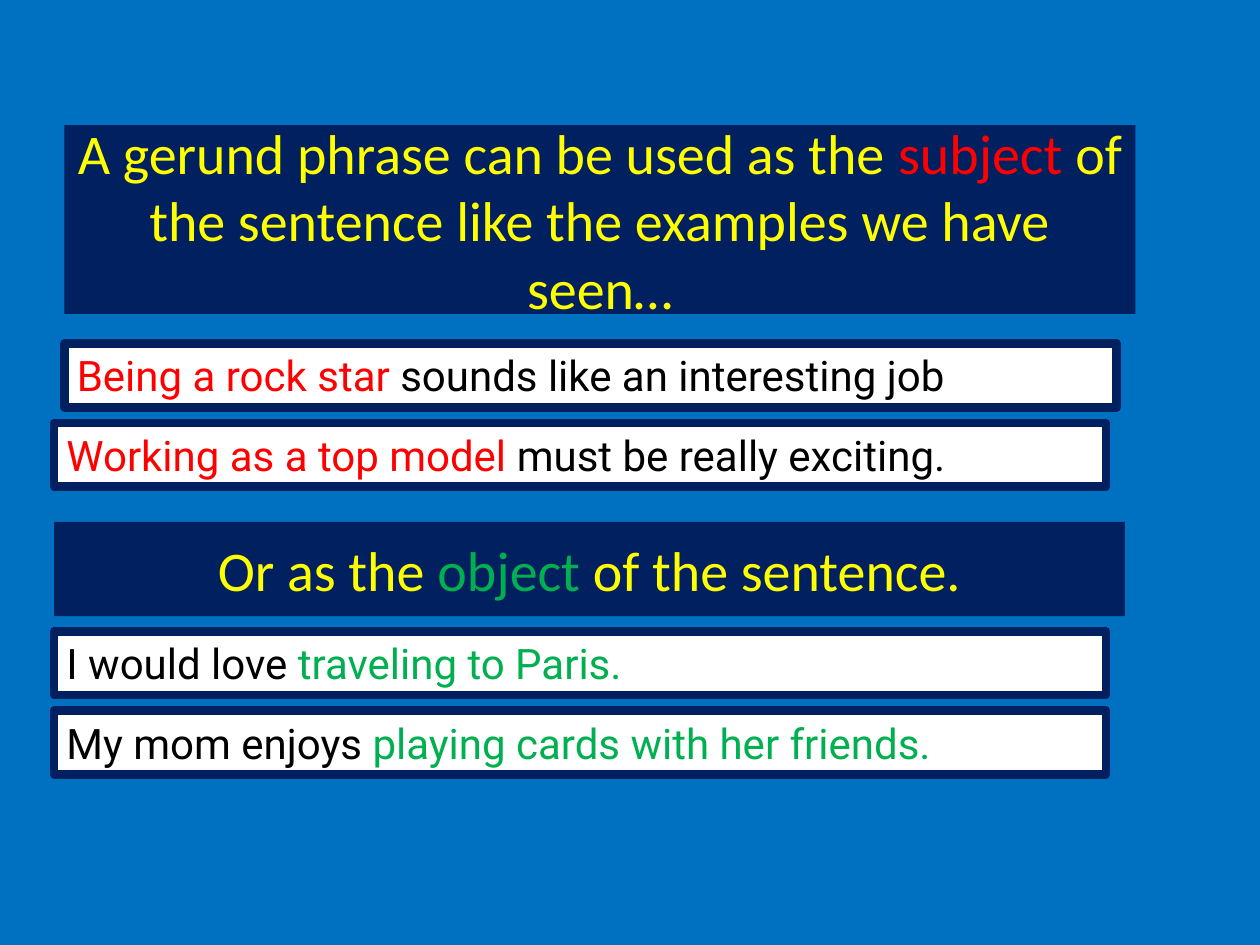
from pptx import Presentation
from pptx import util as u
from pptx.dml.color import RGBColor
from pptx.enum import text

BLUE = RGBColor(0x00, 0x70, 0xC0)
NAVY = RGBColor(0x00, 0x20, 0x60)
WHITE = RGBColor(0xFF, 0xFF, 0xFF)
BLACK = RGBColor(0x00, 0x00, 0x00)
YELLOW = RGBColor(0xFF, 0xFF, 0x00)
RED = RGBColor(0xFF, 0x00, 0x00)
GREEN = RGBColor(0x00, 0xB0, 0x50)

BANNER_FONT = {"name": "Calibri", "size": u.Pt(32)}
EXAMPLE_FONT = {"name": "Roboto", "size": u.Pt(24)}
BANNER_FRAME = {
    "word_wrap": True,
    "auto_size": text.MSO_AUTO_SIZE.NONE,
    "vertical_anchor": text.MSO_ANCHOR.MIDDLE,
}
EXAMPLE_FRAME = {
    "word_wrap": True,
    "auto_size": text.MSO_AUTO_SIZE.SHAPE_TO_FIT_TEXT,
    "vertical_anchor": text.MSO_ANCHOR.TOP,
}


def set_all(target, values):
    for name, value in values.items():
        setattr(target, name, value)


def write(box, fill, frame, align, font, spans):
    box.fill.solid()
    box.fill.fore_color.rgb = fill
    set_all(box.text_frame, frame)
    para = box.text_frame.paragraphs[0]
    para.alignment = align
    for words, color in spans:
        span = para.add_run()
        span.text = words
        set_all(span.font, font)
        span.font.color.rgb = color


deck = Presentation()
deck.slide_width, deck.slide_height = u.Cm(25.4), u.Cm(19.05)
slide = deck.slides.add_slide(deck.slide_layouts[5])
slide.background.fill.solid()
slide.background.fill.fore_color.rgb = BLUE

title = slide.shapes.title
set_all(title, {"left": u.Cm(1.3), "top": u.Cm(2.52), "width": u.Cm(21.59), "height": u.Cm(3.81)})
object_banner = slide.shapes.add_textbox(u.Cm(1.09), u.Cm(10.52), u.Cm(21.59), u.Cm(1.9))
banners = [
    (title, [
        ("A gerund phrase can be used as the ", YELLOW),
        ("subject", RED),
        (" of the sentence like the examples we have seen…", YELLOW),
    ]),
    (object_banner, [
        ("Or as the ", YELLOW),
        ("object", GREEN),
        (" of the sentence.", YELLOW),
    ]),
]
for box, spans in banners:
    write(box, NAVY, BANNER_FRAME, text.PP_ALIGN.CENTER, BANNER_FONT, spans)

examples = [
    (1.09, 8.53, [("Working as a top model ", RED), ("must be really exciting.", BLACK)]),
    (1.3, 6.93, [("Being a rock star ", RED), ("sounds like an interesting job", BLACK)]),
    (1.09, 12.73, [("I would love ", BLACK), ("traveling to Paris.", GREEN)]),
    (1.09, 14.33, [("My mom enjoys ", BLACK), ("playing cards with her friends.", GREEN)]),
]
for left, top, spans in examples:
    box = slide.shapes.add_textbox(u.Cm(left), u.Cm(top), u.Cm(21.21), u.Cm(1.28))
    box.line.color.rgb = NAVY
    box.line.width = u.Pt(5)
    write(box, WHITE, EXAMPLE_FRAME, text.PP_ALIGN.LEFT, EXAMPLE_FONT, spans)

deck.save("out.pptx")
